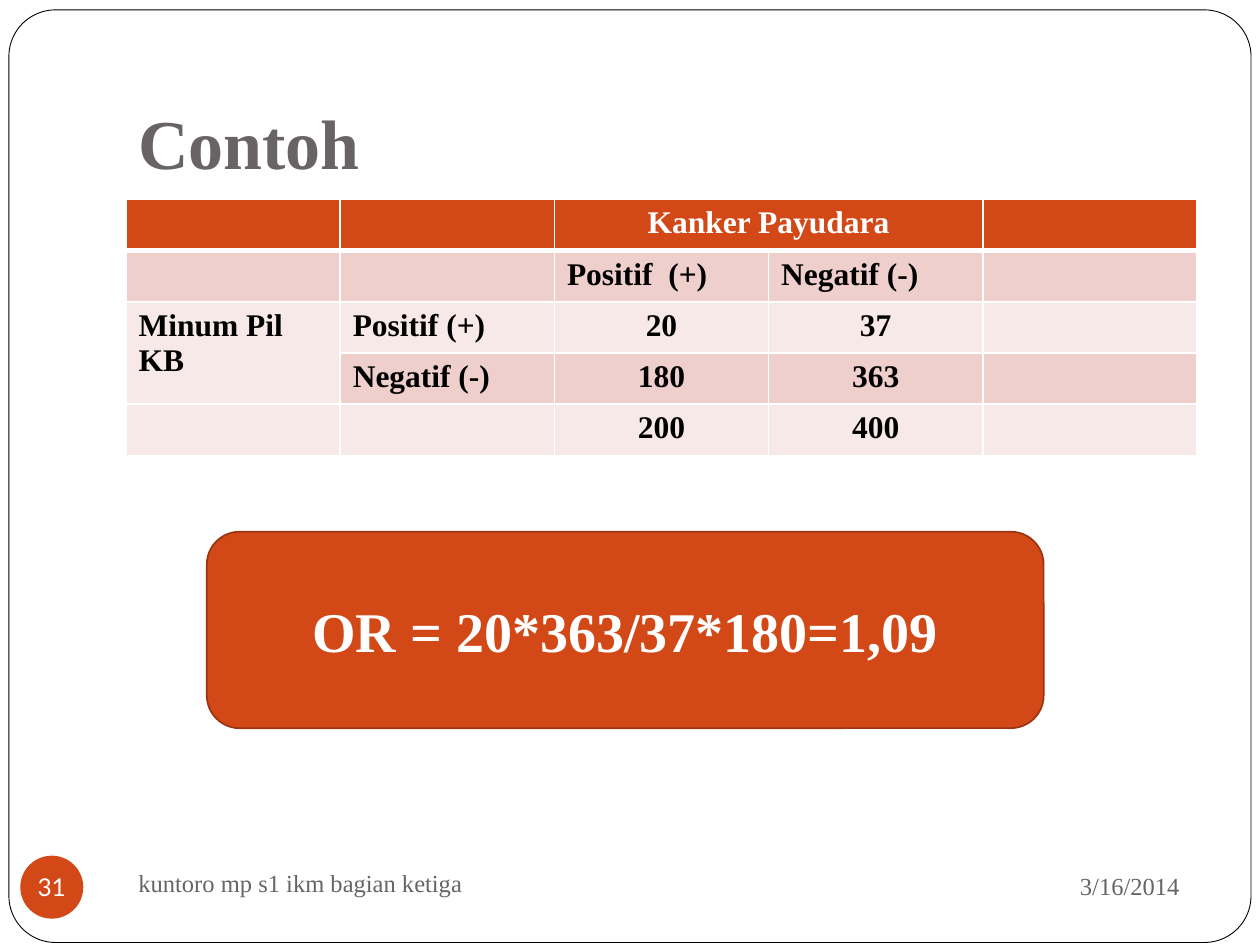
from lxml import etree
from pptx import Presentation
from pptx.dml.color import RGBColor
from pptx.enum import shapes, text
from pptx.oxml.ns import qn
from pptx.util import Cm, Pt

COLORS = {
    "white": "FFFFFF", "black": "000000", "gray": "696464", "accent": "D34817",
    "accent_dark": "9C3511", "band_dark": "EFCFCC", "band_light": "F7E9E8",
}
SERIF = "Times New Roman"
LEFT, CENTER, RIGHT = text.PP_ALIGN.LEFT, text.PP_ALIGN.CENTER, text.PP_ALIGN.RIGHT
MIDDLE, BOTTOM = text.MSO_ANCHOR.MIDDLE, text.MSO_ANCHOR.BOTTOM

ROWS = [
    ["", "", "Kanker Payudara", "", ""],
    ["", "", "Positif  (+)", "Negatif (-)", ""],
    ["Minum Pil KB", "Positif (+)", "20", "37", ""],
    ["", "Negatif (-)", "180", "363", ""],
    ["", "", "200", "400", ""],
]


def rgb(name):
    return RGBColor.from_string(COLORS[name])


def write(frame, content, size, color, align=LEFT, bold=False, font=SERIF):
    paragraph = frame.paragraphs[0]
    paragraph.text = content
    paragraph.alignment = align
    paragraph.font.size = Pt(size)
    paragraph.font.name = font
    paragraph.font.bold = bold
    paragraph.font.color.rgb = rgb(color)


def add_text(slide, box, content, size, anchor=MIDDLE, align=LEFT, bold=False):
    frame = slide.shapes.add_textbox(*map(Cm, box)).text_frame
    frame.word_wrap = True
    frame.vertical_anchor = anchor
    write(frame, content, size, "gray", align, bold)
    return frame


def add_shape(slide, kind, box, fill, line=None, width=1):
    shape = slide.shapes.add_shape(kind, *map(Cm, box))
    shape.shadow.inherit = False
    shape.fill.solid()
    shape.fill.fore_color.rgb = rgb(fill)
    if line:
        shape.line.color.rgb = rgb(line)
        shape.line.width = Pt(width)
    else:
        shape.line.fill.background()
    shape.text_frame.vertical_anchor = MIDDLE
    return shape


def set_borders(cell, bottom_width):
    """Draw white cell borders, which must come before the fill in the XML."""
    properties = cell._tc.get_or_add_tcPr()
    widths = {"a:lnL": 1, "a:lnR": 1, "a:lnT": 1, "a:lnB": bottom_width}
    for index, (tag, width) in enumerate(widths.items()):
        border = etree.Element(qn(tag), w=str(Pt(width)))
        fill = etree.SubElement(border, qn("a:solidFill"))
        etree.SubElement(fill, qn("a:srgbClr"), val=COLORS["white"])
        properties.insert(index, border)


def add_case_table(slide):
    box = map(Cm, (2.54, 4.02, 21.59, 5.16))
    table = slide.shapes.add_table(len(ROWS), len(ROWS[0]), *box).table
    for row_index, row in enumerate(ROWS):
        header = row_index == 0
        band = "band_dark" if row_index % 2 else "band_light"
        for column_index, content in enumerate(row):
            cell = table.cell(row_index, column_index)
            cell.fill.solid()
            cell.fill.fore_color.rgb = rgb("accent" if header else band)
            set_borders(cell, 3 if header else 1)
            centered = header or content.isdigit()
            write(cell.text_frame, content, 18, "white" if header else "black",
                  CENTER if centered else LEFT, bold=True)
    table.cell(0, 2).merge(table.cell(0, 3))
    table.cell(2, 0).merge(table.cell(3, 0))


def add_page_number(slide):
    badge = add_shape(slide, shapes.MSO_SHAPE.OVAL, (0.41, 17.25, 1.27, 1.27), "accent")
    frame = badge.text_frame
    frame.margin_left = frame.margin_right = frame.margin_top = frame.margin_bottom = 0
    frame.word_wrap = False
    write(frame, "31", 14, "white", CENTER, font="Lato")


def main():
    presentation = Presentation()
    presentation.slide_width, presentation.slide_height = Cm(25.4), Cm(19.05)
    slide = presentation.slides.add_slide(presentation.slide_layouts[6])
    rounded = shapes.MSO_SHAPE.ROUNDED_RECTANGLE

    page_frame = add_shape(slide, rounded, (0.18, 0.2, 25.04, 18.8), "white", "black", 0.5)
    page_frame.adjustments[0] = 0.05
    title = add_text(slide, (2.54, 0.76, 21.59, 3.18), "Contoh", 40, BOTTOM, bold=True)
    title.margin_bottom = Cm(0.25)
    add_text(slide, (17.15, 17.2, 6.88, 1.32), "3/16/2014", 14, align=RIGHT)
    add_text(slide, (2.54, 17.15, 11, 1.27), "kuntoro mp s1 ikm bagian ketiga", 14)
    add_page_number(slide)
    add_case_table(slide)
    result = add_shape(slide, rounded, (4.17, 10.72, 16.87, 3.96), "accent", "accent_dark")
    write(result.text_frame, "OR = 20*363/37*180=1,09", 32, "white", CENTER, bold=True)
    presentation.save("out.pptx")


if __name__ == "__main__":
    main()
